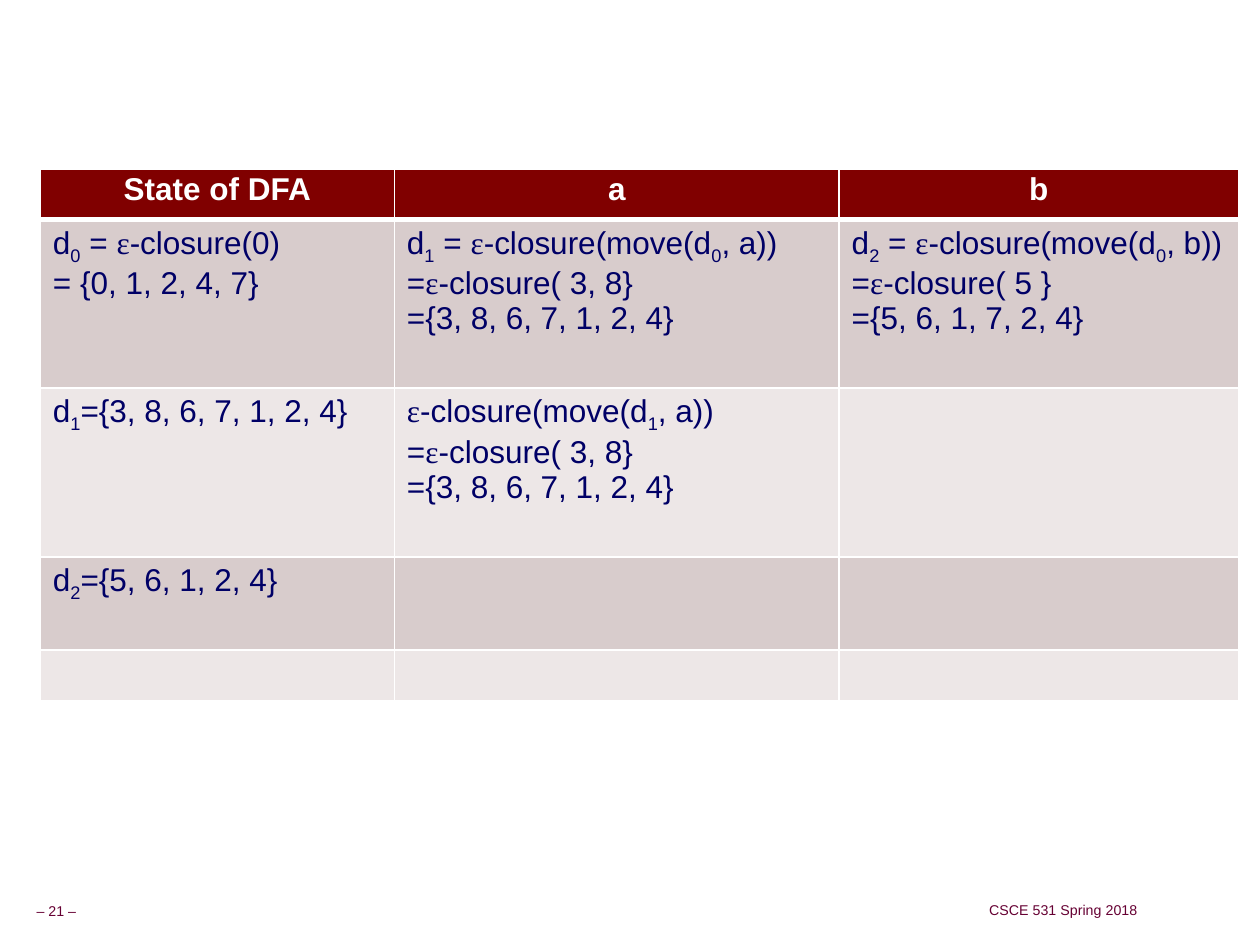
import itertools

import pptx
import pptx.dml.color
import pptx.enum.text
import pptx.oxml
import pptx.oxml.ns
import pptx.util

SUBSCRIPTS = "₀₁₂"
PLAIN_DIGITS = str.maketrans(SUBSCRIPTS, "012")
COLUMN_WIDTHS = [2.81, 3.53, 3.17]
ROW_HEIGHTS = [0.4, 1.34, 1.34, 0.74, 0.4]
HEADINGS = ["State of DFA", "a", "b"]
STATES = [
    [
        ["d₀ = ε-closure(0)", "= {0, 1, 2, 4, 7}"],
        ["d₁ = ε-closure(move(d₀, a))\n=ε-closure( 3, 8}", "={3, 8, 6, 7, 1, 2, 4}"],
        ["d₂ = ε-closure(move(d₀, b))\n=ε-closure( 5 }", "={5, 6, 1, 7, 2, 4}"],
    ],
    [
        ["d₁={3, 8, 6, 7, 1, 2, 4}"],
        ["ε-closure(move(d₁, a))", "=ε-closure( 3, 8}", "={3, 8, 6, 7, 1, 2, 4}"],
        [],
    ],
    [["d₂={5, 6, 1, 2, 4}"], [], []],
    [[], [], []],
]


def color(value):
    return pptx.dml.color.RGBColor.from_string(value)


def character_kind(character):
    if character in SUBSCRIPTS:
        return "subscript"
    return {"ε": "greek", "\n": "break"}.get(character, "plain")


def add_span(para, text, size, ink, bold=False, face="Arial", lowered=False):
    span = para.add_run()
    span.text = text
    span.font.name = face
    span.font.size = pptx.util.Pt(size)
    span.font.bold = bold
    span.font.color.rgb = color(ink)
    if lowered:
        span.font._element.set("baseline", "-25000")


def add_formula(para, text):
    for kind, characters in itertools.groupby(text, character_kind):
        if kind == "break":
            para.add_line_break()
            continue
        part = "".join(characters).translate(PLAIN_DIGITS)
        face = "Times New Roman" if kind == "greek" else "Arial"
        add_span(para, part, 18, "000066", face=face, lowered=kind == "subscript")


def paint_cell(cell, fill, bottom=1):
    cell.fill.solid()
    cell.fill.fore_color.rgb = color(fill)
    properties = cell._tc.get_or_add_tcPr()
    for index, (side, width) in enumerate(zip("LRTB", (1, 1, 1, bottom))):
        border = pptx.oxml.parse_xml(
            f'<a:ln{side} {pptx.oxml.ns.nsdecls("a")} w="{pptx.util.Pt(width)}">'
            f'<a:solidFill><a:srgbClr val="FFFFFF"/></a:solidFill></a:ln{side}>'
        )
        properties.insert(index, border)


def add_state_table(page):
    left, top = pptx.util.Inches(0.32), pptx.util.Inches(1.34)
    width = pptx.util.Inches(sum(COLUMN_WIDTHS))
    height = pptx.util.Inches(sum(ROW_HEIGHTS))
    table = page.shapes.add_table(
        len(ROW_HEIGHTS), len(COLUMN_WIDTHS), left, top, width, height
    ).table
    for column, size in zip(table.columns, COLUMN_WIDTHS):
        column.width = pptx.util.Inches(size)
    for row, size in zip(table.rows, ROW_HEIGHTS):
        row.height = pptx.util.Inches(size)
    for column, heading in enumerate(HEADINGS):
        cell = table.cell(0, column)
        paint_cell(cell, "800000", bottom=3)
        para = cell.text_frame.paragraphs[0]
        para.alignment = pptx.enum.text.PP_ALIGN.CENTER
        para.line_spacing = 0.9
        add_span(para, heading, 18, "FFFFFF", bold=True)
    for row, cells in enumerate(STATES, 1):
        for column, formulas in enumerate(cells):
            cell = table.cell(row, column)
            paint_cell(cell, "D8CCCC" if row % 2 else "EDE7E7")
            for index, formula in enumerate(formulas):
                frame = cell.text_frame
                para = frame.add_paragraph() if index else frame.paragraphs[0]
                add_formula(para, formula)


def add_footer(page, text, left, top, width):
    box = page.shapes.add_textbox(*map(pptx.util.Inches, (left, top, width, 0.31)))
    frame = box.text_frame
    frame.word_wrap = False
    frame.vertical_anchor = pptx.enum.text.MSO_ANCHOR.MIDDLE
    inset = pptx.util.Inches(0.05)
    frame.margin_left = frame.margin_right = inset
    frame.margin_top = frame.margin_bottom = inset
    para = frame.paragraphs[0]
    para.alignment = pptx.enum.text.PP_ALIGN.LEFT
    para.line_spacing = 0.9
    add_span(para, text, 14, "660033", lowered=True)


def main():
    deck = pptx.Presentation()
    deck.slide_width = pptx.util.Inches(10)
    deck.slide_height = pptx.util.Inches(7.5)
    page = deck.slides.add_slide(deck.slide_layouts[6])
    add_footer(page, "– 21 –", 0.24, 7, 0.66)
    add_footer(page, "CSCE 531 Spring 2018", 7.8, 6.99, 2.14)
    add_state_table(page)
    deck.save("out.pptx")


if __name__ == "__main__":
    main()
